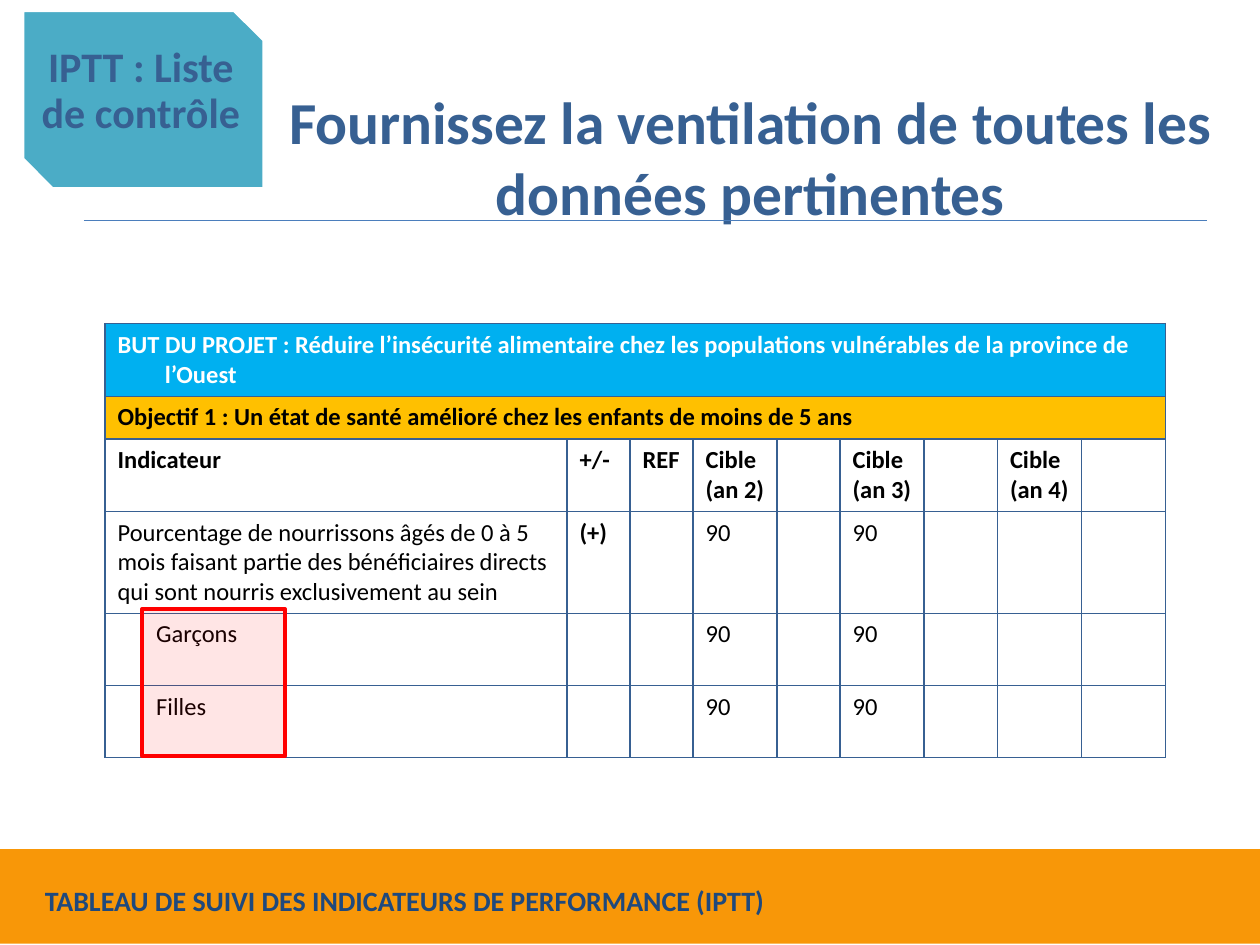
from lxml import etree
from pptx import Presentation
from pptx.dml.color import RGBColor
from pptx.enum import shapes, text
from pptx.oxml.ns import qn
from pptx.util import Pt

HUES = {
    "white": "FFFFFF", "black": "000000", "title": "376092", "navy": "1F497D",
    "orange": "F89708", "sky": "00B0F0", "gold": "FFC000", "teal": "4BACC6",
    "red": "FF0000", "rule": "4B7EBC",
}
FONT = "Calibri"
HANG = 27
COLS = [264, 36, 36, 48, 36, 48, 42, 48, 48]
ROWS = [41.5, 24.25, 41.5, 58.25, 41.25, 41.25]
GOAL = ("BUT DU PROJET : Réduire l’insécurité alimentaire chez les populations "
        "vulnérables de la province de l’Ouest")
AIM = "Objectif 1 : Un état de santé amélioré chez les enfants de moins de 5 ans"
HEAD = ["Indicateur", "+/-", "REF", "Cible\n(an 2)", "", "Cible\n(an 3)", "",
        "Cible\n(an 4)", ""]
RATE = ("Pourcentage de nourrissons âgés de 0 à 5 mois faisant partie des "
        "bénéficiaires directs qui sont nourris exclusivement au sein")
DATA = [
    HEAD,
    [RATE, "(+)", "", "90", "", "90", "", "", ""],
    ["Garçons", "", "", "90", "", "90", "", "", ""],
    ["Filles", "", "", "90", "", "90", "", "", ""],
]


def rgb(hue):
    return RGBColor.from_string(HUES[hue])


def style(part, size, hue, bold=True):
    part.font.name = FONT
    part.font.size = Pt(size)
    part.font.bold = bold
    part.font.color.rgb = rgb(hue)


def write(slide, box, words, size, hue, align=text.PP_ALIGN.LEFT,
          anchor=text.MSO_ANCHOR.TOP):
    frame = slide.shapes.add_textbox(*map(Pt, box)).text_frame
    frame.word_wrap = True
    frame.vertical_anchor = anchor
    frame.text = words
    for para in frame.paragraphs:
        para.alignment = align
        for run in para.runs:
            style(run, size, hue)
    return frame


def block(slide, kind, box, fill, line=None):
    shape = slide.shapes.add_shape(kind, *map(Pt, box))
    shape.shadow.inherit = False
    shape.fill.solid()
    shape.fill.fore_color.rgb = rgb(fill)
    if line:
        shape.line.color.rgb = rgb(line)
        shape.line.width = Pt(2)
    else:
        shape.line.fill.background()
    return shape


def edge(cell):
    """Draw a thin line on all four sides of a cell."""
    props = cell._tc.get_or_add_tcPr()
    for side in ("a:lnL", "a:lnR", "a:lnT", "a:lnB"):
        line = etree.SubElement(props, qn(side), w=str(Pt(1)))
        solid = etree.SubElement(line, qn("a:solidFill"))
        etree.SubElement(solid, qn("a:srgbClr"), val=HUES["title"])


def fill_cell(cell, words, hue="black", bold=True, left=HANG, first=-HANG):
    cell.text = words
    for para in cell.text_frame.paragraphs:
        props = para._p.get_or_add_pPr()
        props.set("marL", str(Pt(left)))
        props.set("indent", str(Pt(first)))
        style(para, 14, hue, bold)
        for run in para.runs:
            style(run, 14, hue, bold)


def indent(row, col):
    """Return the left margin and first-line indent of a data cell."""
    if DATA[row][col] in (RATE, "REF"):
        return 0, 0
    if col == 0 and row > 1:
        return HANG, -5
    return HANG, -HANG


def grid(slide, box):
    frame = slide.shapes.add_table(len(ROWS), len(COLS), *map(Pt, box))
    table = frame.table
    table.first_row = table.horz_banding = False
    for col, width in zip(table.columns, COLS):
        col.width = Pt(width)
    for row, height in zip(table.rows, ROWS):
        row.height = Pt(height)
    for cell in table.iter_cells():
        edge(cell)
        cell.fill.background()
    bands = [(GOAL, "sky", "white"), (AIM, "gold", "black")]
    for row, (words, fill, hue) in enumerate(bands):
        cell = table.cell(row, 0)
        cell.merge(table.cell(row, len(COLS) - 1))
        cell.fill.solid()
        cell.fill.fore_color.rgb = rgb(fill)
        cell.vertical_anchor = text.MSO_ANCHOR.BOTTOM
        fill_cell(cell, words, hue)
    for row, line in enumerate(DATA):
        for col, words in enumerate(line):
            bold = row == 0 or col == 1
            fill_cell(table.cell(row + len(bands), col), words, "black", bold,
                      *indent(row, col))


def badge(slide, box):
    left, top, wide, high = box
    block(slide, shapes.MSO_SHAPE.SNIP_2_DIAG_RECTANGLE, box, "teal", "white")
    frame = write(slide, (left + 3.5, top + 5, wide - 10, high - 19),
                  "IPTT\u00a0: Liste de contrôle", 24, "title",
                  text.PP_ALIGN.CENTER, text.MSO_ANCHOR.MIDDLE)
    frame.margin_left = frame.margin_right = 0
    frame.margin_top = frame.margin_bottom = 0
    frame.paragraphs[0].line_spacing = 0.9


def rule(slide, left, right, top):
    line = slide.shapes.add_connector(
        shapes.MSO_CONNECTOR.STRAIGHT, Pt(left), Pt(top), Pt(right), Pt(top))
    line.line.color.rgb = rgb("rule")
    line.line.width = Pt(0.75)
    etree.SubElement(line._element.spPr, qn("a:effectLst"))


def marker(slide, box):
    """Outline a region in red over a faint red tint."""
    shape = block(slide, shapes.MSO_SHAPE.RECTANGLE, box, "red", "red")
    tint = shape._element.spPr.find(qn("a:solidFill"))[0]
    etree.SubElement(tint, qn("a:alpha"), val="10000")


def footer(slide, box):
    left, top, wide, high = box
    block(slide, shapes.MSO_SHAPE.RECTANGLE, box, "orange")
    write(slide, (left + 19, top + 16, wide - 85, 28),
          "TABLEAU DE SUIVI DES INDICATEURS DE PERFORMANCE (IPTT)", 16, "navy")


def main():
    deck = Presentation()
    deck.slide_width, deck.slide_height = Pt(720), Pt(540)
    slide = deck.slides.add_slide(deck.slide_layouts[6])
    footer(slide, (-0.5, 485.25, 720.5, 54))
    write(slide, (154.8, 46, 548, 86.4),
          "Fournissez la ventilation de toutes les données pertinentes",
          34, "title", text.PP_ALIGN.CENTER, text.MSO_ANCHOR.MIDDLE)
    grid(slide, (60, 185, sum(COLS), sum(ROWS)))
    marker(slide, (81, 348, 82, 84))
    badge(slide, (13, 6, 138, 102))
    rule(slide, 48, 690, 126)
    deck.save("out.pptx")


if __name__ == "__main__":
    main()
